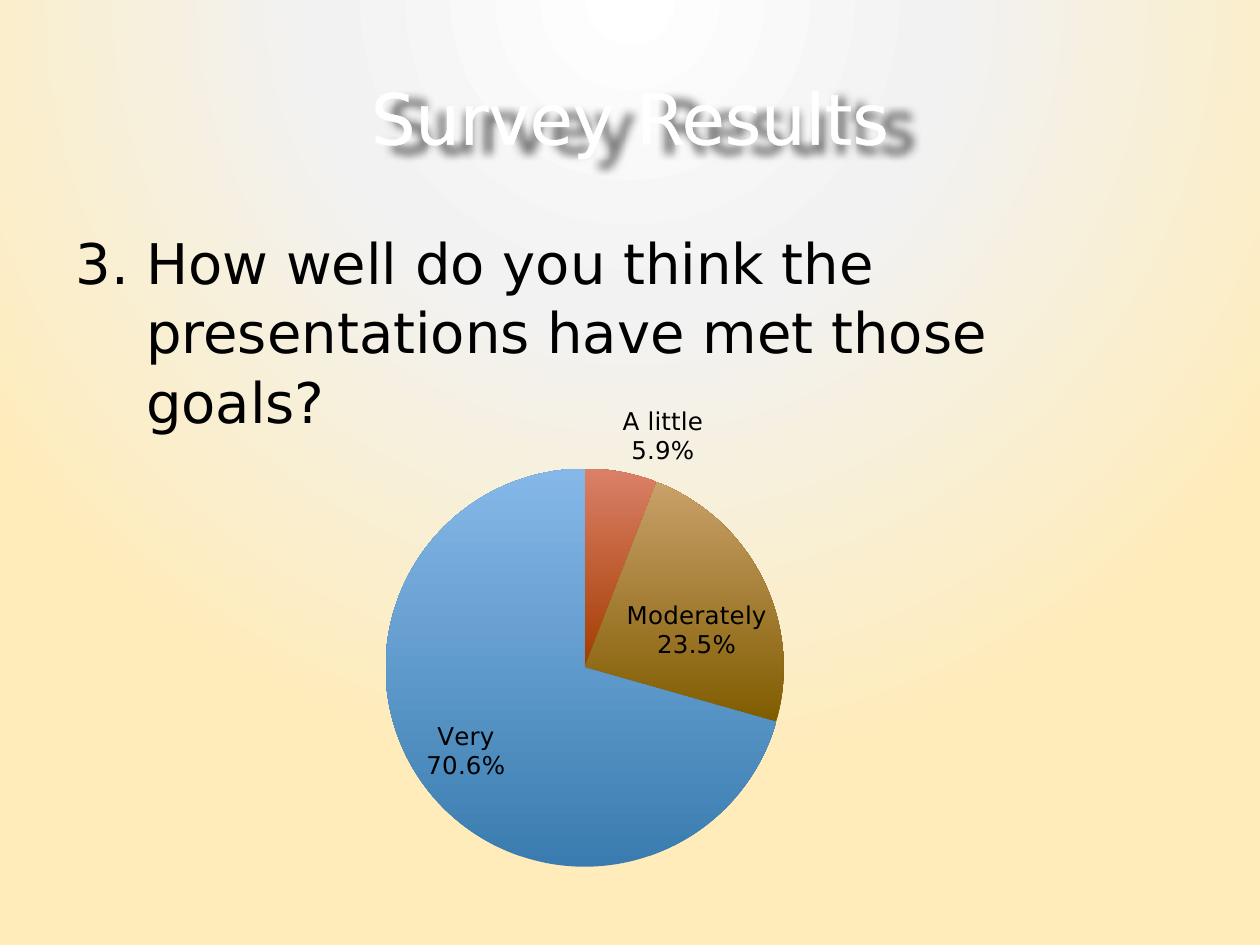
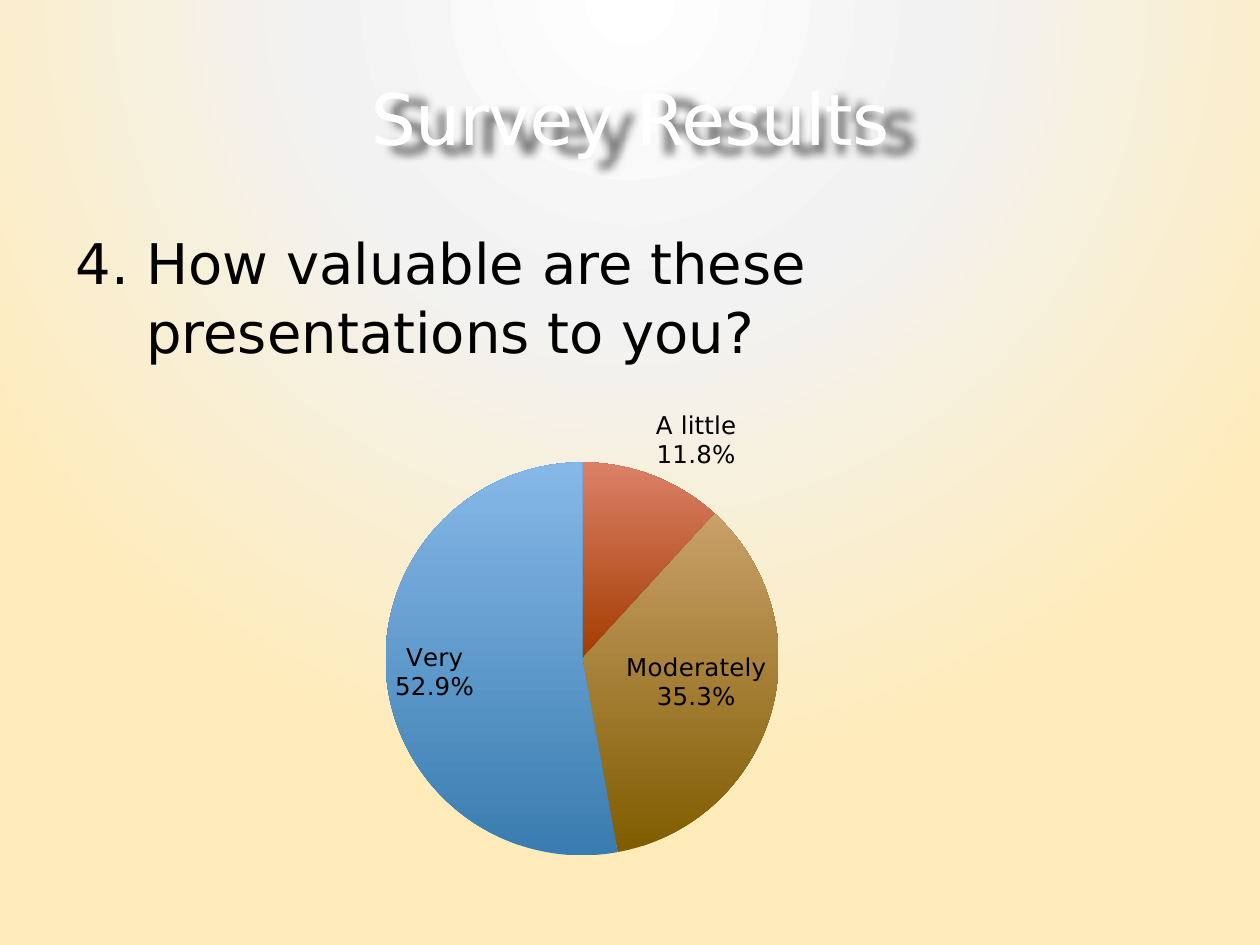
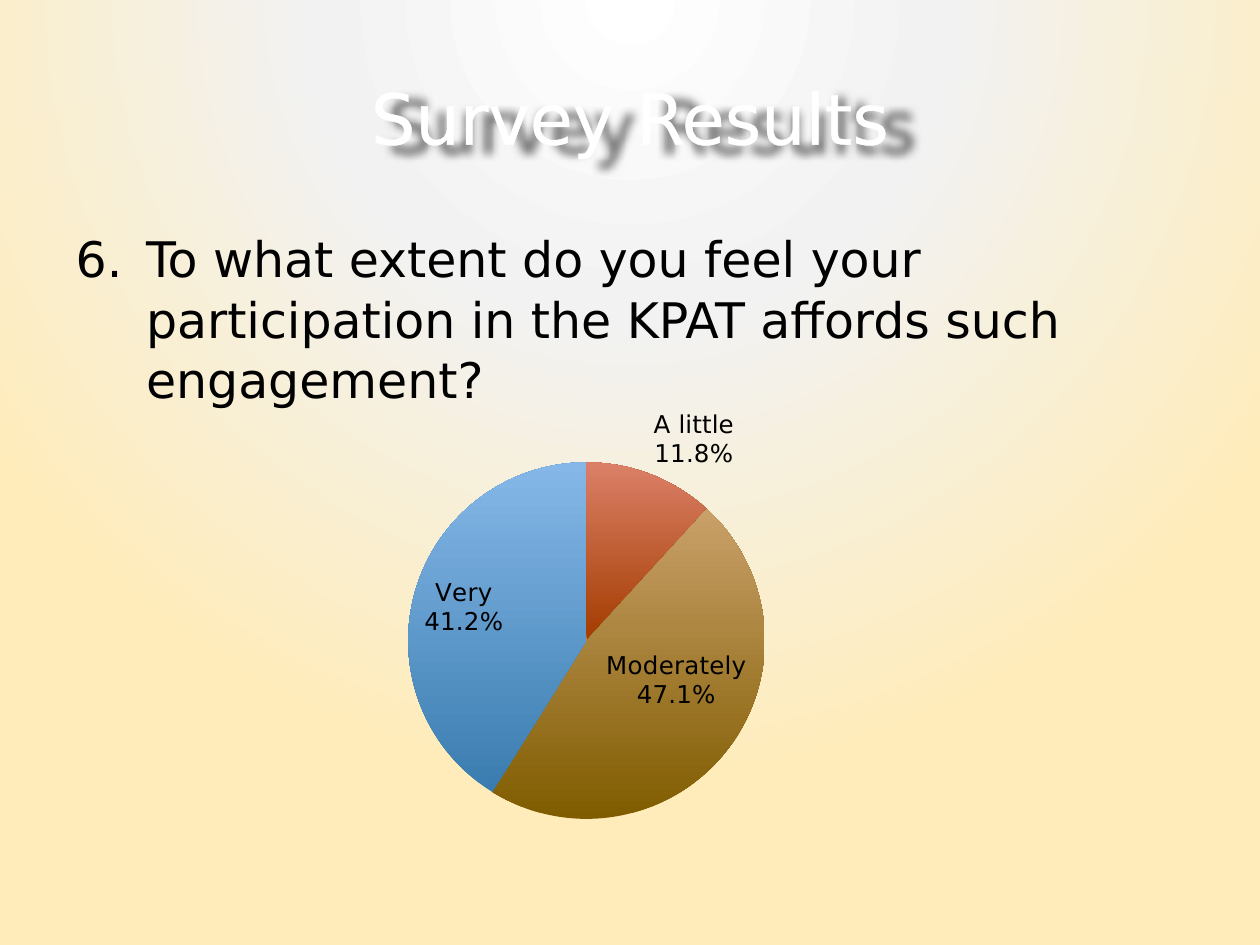
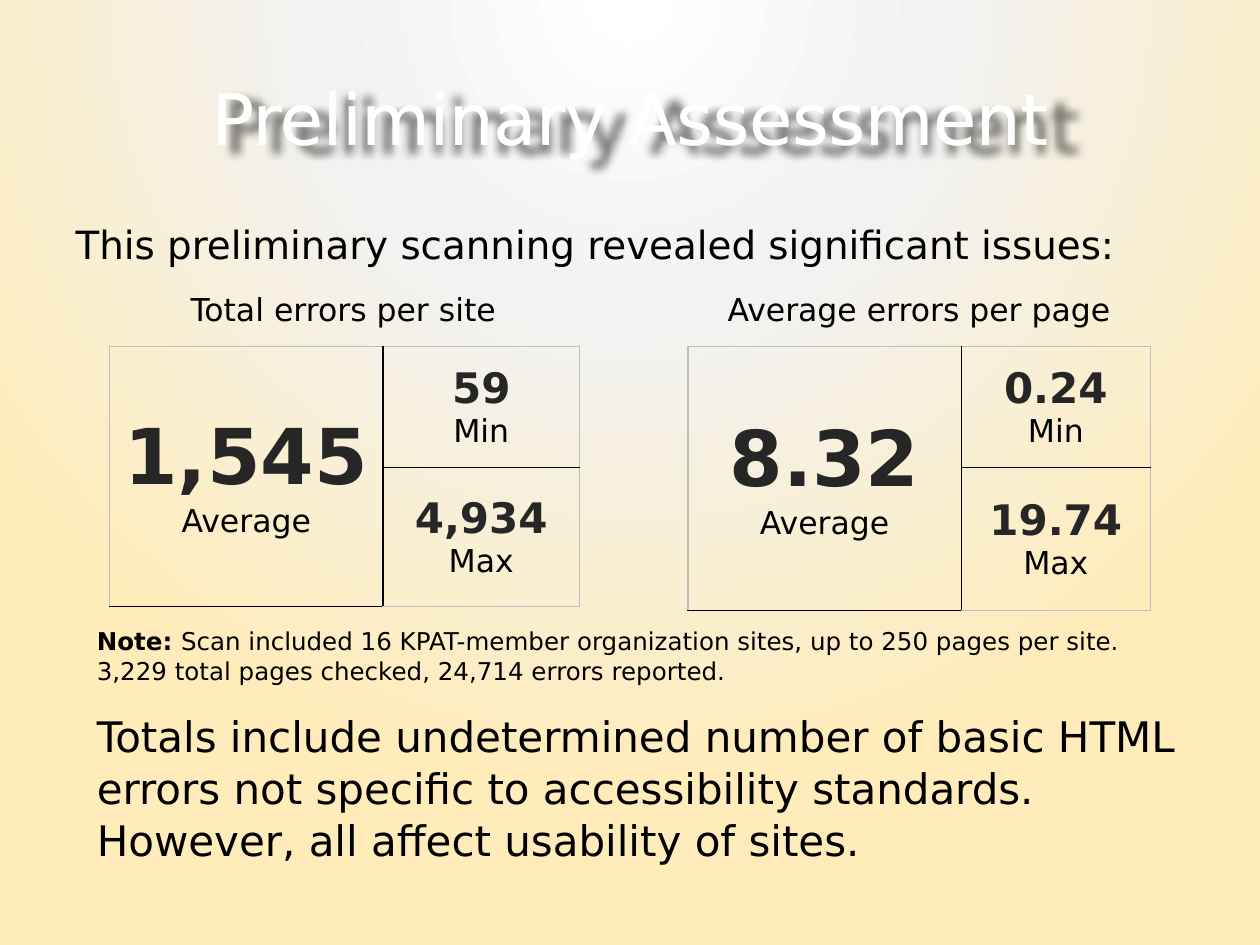
from dataclasses import dataclass

from lxml.etree import SubElement
from pptx import Presentation
from pptx.chart.data import CategoryChartData
from pptx.dml.color import RGBColor
from pptx.enum.chart import XL_CHART_TYPE as ChartType, XL_LABEL_POSITION as LabelPosition
from pptx.enum.text import MSO_ANCHOR as Anchor, MSO_AUTO_SIZE as AutoSize, PP_ALIGN as Align
from pptx.oxml import parse_xml
from pptx.oxml.ns import nsdecls, qn
from pptx.util import Inches, Pt

# Content
ANSWERS = ["Not at all", "A little", "Moderately", "Very"]
SURVEYS = [  # pie is left, top, diameter in inches
    dict(number=3, question="How well do you think the presentations have met those goals?",
         size=32, shares=[0, 5.9, 23.5, 70.6], pie=(3.06, 3.72, 3.16)),
    dict(number=4, question="How valuable are these presentations to you?",
         size=32, shares=[0, 11.8, 35.3, 52.9], pie=(3.06, 3.67, 3.12)),
    dict(number=6, question="To what extent do you feel your participation in the KPAT "
                            "affords such engagement?",
         size=28, shares=[0, 11.8, 47.1, 41.2], pie=(3.24, 3.67, 2.83)),
]
INTRO = "This preliminary scanning revealed significant issues:"
ERROR_TABLES = [  # left and column widths in inches
    dict(caption="Total errors per site", caption_left=1.06, left=0.87, columns=(2.17, 1.56),
         average="1,545", least="59", most="4,934"),
    dict(caption="Average errors per page", caption_left=5.63, left=5.46, columns=(2.17, 1.5),
         average="8.32", least="0.24", most="19.74"),
]
NOTE = [("Note: ", True),
        ("Scan included 16 KPAT-member organization sites, up to 250 pages per site. "
         "3,229 total pages checked, 24,714 errors reported.", False)]
CONCLUSION = ("Totals include undetermined number of basic HTML errors not specific to "
              "accessibility standards. However, all affect usability of sites.")


@dataclass(frozen=True)
class Theme:
    font: str = "DejaVu Sans"
    text: str = "000000"
    title: str = "FFFFFF"
    frame: str = "BFBFBF"
    background: tuple = ((0, "FFFFFF"), (40, "F2F2F2"), (100, "FFECBA"))
    figures: tuple = ((0, "000000"), (50, "262626"), (100, "595959"))
    slices: tuple = (("4A6E62", "92ACA2"), ("A43C00", "DB8068"),
                     ("805C00", "C9A069"), ("3A7CAF", "85B8E8"))  # bottom, top
    title_size: float = 40
    intro_size: float = 22.2
    conclusion_size: float = 24
    label_size: float = 18
    small_size: float = 14
    big_figure: float = 44
    figure: float = 24
    line_spacing: float = 1.03


THEME = Theme()
CHART_BOX = (1.92, 3.08, 6.17, 3.94)
ROW_HEIGHTS = (0.96, 1.1)


# Shared helpers
def gradient(stops, direction):
    marks = "".join(f'<a:gs pos="{at * 1000}"><a:srgbClr val="{color}"/></a:gs>'
                    for at, color in stops)
    return f'<a:gradFill {nsdecls("a")}><a:gsLst>{marks}</a:gsLst>{direction}</a:gradFill>'


def place(shape, left, top, width, height):
    shape.left, shape.top = Inches(left), Inches(top)
    shape.width, shape.height = Inches(width), Inches(height)


def add_span(para, text, size, color=THEME.text, bold=False):
    span = para.add_run()
    span.text = text
    span.font.name, span.font.size, span.font.bold = THEME.font, Pt(size), bold
    if color:
        span.font.color.rgb = RGBColor.from_string(color)
    return span


def add_text_box(page, box, spans, size, align=Align.LEFT, spacing=None):
    shape = page.shapes.add_textbox(*map(Inches, box))
    frame = shape.text_frame
    frame.word_wrap, frame.auto_size = True, AutoSize.SHAPE_TO_FIT_TEXT
    para = frame.paragraphs[0]
    para.alignment, para.line_spacing = align, spacing
    for text, bold in spans:
        add_span(para, text, size, bold=bold)
    return frame


def set_background(deck):
    content = deck.slide_master.element.cSld
    content.remove(content.find(qn("p:bg")))
    circle = ('<a:path path="circle"><a:fillToRect l="50000" t="-80000" r="50000" '
              'b="180000"/></a:path>')
    content.insert(0, parse_xml(
        f'<p:bg {nsdecls("p", "a")}><p:bgPr>{gradient(THEME.background, circle)}'
        '<a:effectLst/></p:bgPr></p:bg>'))


def add_page(deck, title):
    page = deck.slides.add_slide(deck.slide_layouts[1])
    shape = page.shapes.title
    place(shape, 0, 0.3, 10, 1.25)
    frame = shape.text_frame
    frame.vertical_anchor, frame.auto_size = Anchor.MIDDLE, AutoSize.NONE
    para = frame.paragraphs[0]
    para.alignment = Align.CENTER
    span = add_span(para, title, THEME.title_size, THEME.title)
    span.font._element.insert(0, parse_xml(
        f'<a:ln {nsdecls("a")} w="18415"><a:solidFill><a:srgbClr val="{THEME.title}"/>'
        '</a:solidFill></a:ln>'))
    shape.element.spPr.append(parse_xml(
        f'<a:effectLst {nsdecls("a")}><a:outerShdw blurRad="63500" dist="80000" dir="2700000" '
        'sx="102000" algn="tl" rotWithShape="0"><a:srgbClr val="000000">'
        '<a:alpha val="50000"/></a:srgbClr></a:outerShdw></a:effectLst>'))
    return page


def fill_body(page, box, text, size, number=None):
    body = page.placeholders[1]
    place(body, *box)
    frame = body.text_frame
    frame.auto_size = AutoSize.NONE
    para = frame.paragraphs[0]
    layout = para._p.get_or_add_pPr()
    margin = Inches(0.56) if number else 0
    layout.set("marL", str(margin))
    layout.set("indent", str(-margin))
    if number:
        SubElement(layout, qn("a:buAutoNum"), type="arabicPeriod", startAt=str(number))
    else:
        SubElement(layout, qn("a:buNone"))
    para.space_before, para.line_spacing = Pt(0), THEME.line_spacing
    add_span(para, text, size)
    return frame


# Survey slides
def add_pie(page, shares, pie):
    data = CategoryChartData()
    data.categories = ANSWERS
    data.add_series("Series 1", shares)
    chart = page.shapes.add_chart(ChartType.PIE, *map(Inches, CHART_BOX), data).chart
    chart.has_legend = chart.has_title = False
    chart.font.name, chart.font.size = THEME.font, Pt(THEME.label_size)
    chart.font.color.rgb = RGBColor.from_string(THEME.text)
    plot = chart.plots[0]
    plot.vary_by_categories = True
    series = plot.series[0]
    for index, colors in enumerate(THEME.slices):
        fill = series.points[index].format.fill
        fill.gradient()
        fill.gradient_angle = 90
        for stop, color in zip(fill.gradient_stops, colors):
            stop.color.rgb = RGBColor.from_string(color)

    labels = series.data_labels
    labels.show_percentage = labels.show_category_name = True
    labels.show_value = False
    labels.number_format, labels.number_format_is_linked = "0.0%", False
    labels.position = LabelPosition.BEST_FIT
    labels.font.name, labels.font.size = THEME.font, Pt(THEME.small_size)
    labels.font.color.rgb = RGBColor.from_string(THEME.text)
    # The empty first slice has no label
    labels._element.insert(0, parse_xml(
        f'<c:dLbl {nsdecls("c")}><c:idx val="0"/><c:delete val="1"/></c:dLbl>'))

    left, top, width, height = CHART_BOX
    pie_left, pie_top, diameter = pie
    spots = dict(x=(pie_left - left) / width, y=(pie_top - top) / height,
                 w=diameter / width, h=diameter / height)
    area = chart._chartSpace.chart.plotArea
    for old in area.findall(qn("c:layout")):
        area.remove(old)
    values = "".join(f'<c:{key} val="{value:.4f}"/>' for key, value in spots.items())
    area.insert(0, parse_xml(
        f'<c:layout {nsdecls("c")}><c:manualLayout><c:layoutTarget val="inner"/>'
        f'<c:xMode val="edge"/><c:yMode val="edge"/>{values}</c:manualLayout></c:layout>'))


def add_survey(deck, survey):
    page = add_page(deck, "Survey Results")
    fill_body(page, (0.5, 1.75, 9, 5.42), survey["question"], survey["size"], survey["number"])
    add_pie(page, survey["shares"], survey["pie"])


# Assessment slide
def fill_cell(cell, figure, size, label):
    cell.vertical_anchor = Anchor.MIDDLE
    frame = cell.text_frame
    para = frame.paragraphs[0]
    para.alignment = Align.CENTER
    span = add_span(para, figure, size, color=None, bold=True)
    span.font._element.insert(0, parse_xml(
        gradient(THEME.figures, '<a:lin ang="16200000" scaled="0"/>')))
    para = frame.add_paragraph()
    para.alignment = Align.CENTER
    add_span(para, label, THEME.label_size)


def set_borders(cell, row, column):
    outer = dict(L=column == 0, R=column == 1, T=row == 0, B=row == 1)
    properties = cell._tc.get_or_add_tcPr()
    for index, (side, is_outer) in enumerate(outer.items()):
        color, width = (THEME.frame, 0.75) if is_outer else (THEME.text, 1)
        properties.insert(index, parse_xml(
            f'<a:ln{side} {nsdecls("a")} w="{Pt(width)}"><a:solidFill>'
            f'<a:srgbClr val="{color}"/></a:solidFill></a:ln{side}>'))


def add_error_table(page, errors):
    columns = errors["columns"]
    box = (errors["left"], 2.75, sum(columns), sum(ROW_HEIGHTS))
    table = page.shapes.add_table(2, 2, *map(Inches, box)).table
    table.first_row = table.horz_banding = False
    for column, width in zip(table.columns, columns):
        column.width = Inches(width)
    for row, height in zip(table.rows, ROW_HEIGHTS):
        row.height = Inches(height)
    for row in range(2):
        for column in range(2):
            cell = table.cell(row, column)
            cell.fill.background()
            set_borders(cell, row, column)
    table.cell(0, 0).merge(table.cell(1, 0))
    fill_cell(table.cell(0, 0), errors["average"], THEME.big_figure, "Average")
    fill_cell(table.cell(0, 1), errors["least"], THEME.figure, "Min")
    fill_cell(table.cell(1, 1), errors["most"], THEME.figure, "Max")
    add_text_box(page, (errors["caption_left"], 2.25, 3.33, 0.4),
                 [(errors["caption"], False)], THEME.label_size, Align.CENTER)


def add_assessment(deck):
    page = add_page(deck, "Preliminary Assessment")
    frame = fill_body(page, (0.5, 1.25, 9, 1), INTRO, THEME.intro_size)
    frame.vertical_anchor, frame.margin_bottom = Anchor.BOTTOM, Inches(0.13)
    for errors in ERROR_TABLES:
        add_error_table(page, errors)
    note = add_text_box(page, (0.67, 4.92, 9, 0.57), NOTE, THEME.small_size)
    note.margin_right = Inches(0.2)
    add_text_box(page, (0.67, 5.58, 9, 1.31), [(CONCLUSION, False)],
                 THEME.conclusion_size, spacing=THEME.line_spacing)


def main():
    deck = Presentation()
    deck.slide_width, deck.slide_height = Inches(10), Inches(7.5)
    set_background(deck)
    for survey in SURVEYS:
        add_survey(deck, survey)
    add_assessment(deck)
    deck.save("out.pptx")


if __name__ == "__main__":
    main()
